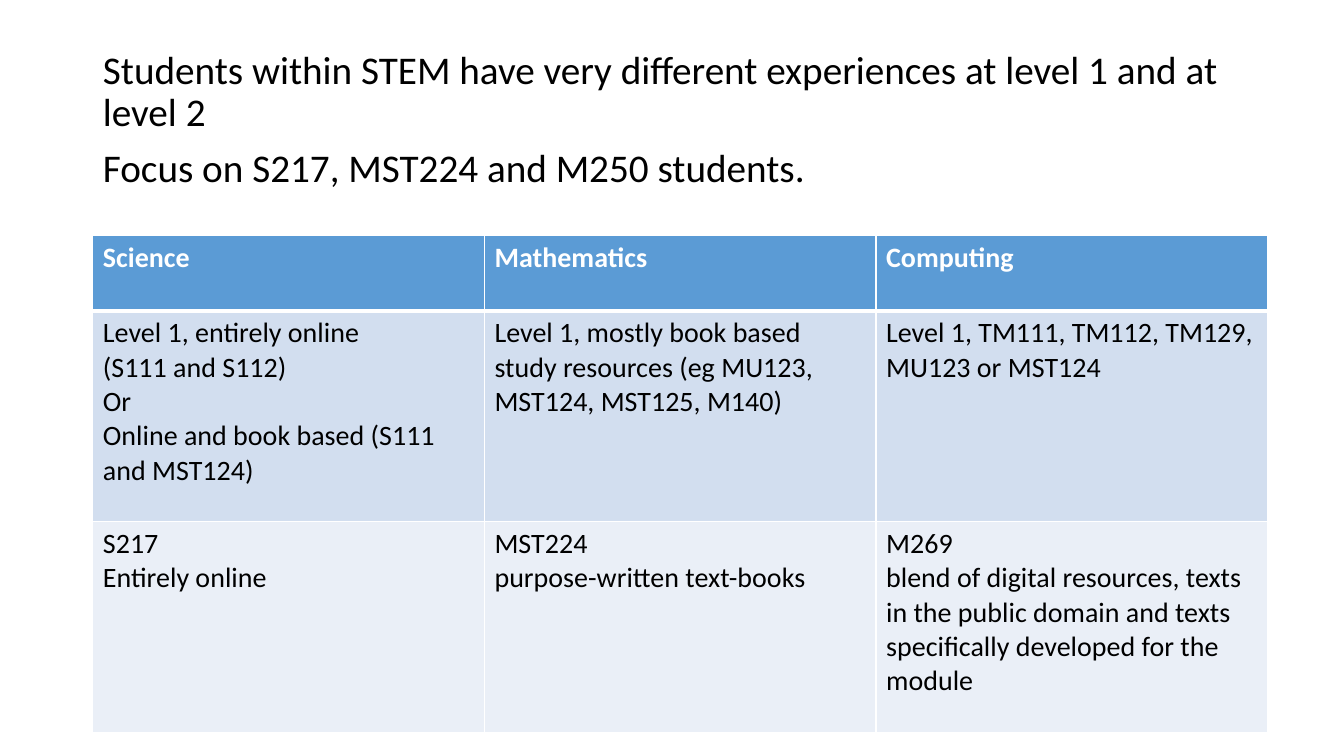
"""Build a slide comparing level 1 and level 2 study in three STEM subjects."""
import lxml.etree
import pptx
import pptx.dml.color
import pptx.enum.text
import pptx.oxml
import pptx.oxml.ns
import pptx.util

Cm, Pt = pptx.util.Cm, pptx.util.Pt
qn = pptx.oxml.ns.qn

THEME = {
    "font": "Calibri",
    "intro_size": 28,
    "table_size": 20,
    "text": "000000",
    "header_text": "FFFFFF",
    "rule": "FFFFFF",
    "row_fills": ["5B9BD5", "D2DEEF", "EAEFF7"],
}


def style_paragraph(paragraph, size, color, bold=False):
    for run in paragraph.runs:
        run.font.name = THEME["font"]
        run.font.size = Pt(size)
        run.font.bold = bold
        run.font.color.rgb = pptx.dml.color.RGBColor.from_string(color)


def add_cell_rules(cell, widths):
    properties = cell._tc.get_or_add_tcPr()
    for position, (side, width) in enumerate(widths.items()):
        rule = lxml.etree.Element(qn(f"a:ln{side}"), w=str(Pt(width)))
        fill = lxml.etree.SubElement(rule, qn("a:solidFill"))
        lxml.etree.SubElement(fill, qn("a:srgbClr"), val=THEME["rule"])
        properties.insert(position, rule)


presentation = pptx.Presentation()
presentation.slide_width = Cm(33.87)
presentation.slide_height = Cm(19.05)
slide = presentation.slides.add_slide(presentation.slide_layouts[1])
unused_title = slide.shapes.title.element
unused_title.getparent().remove(unused_title)

intro = slide.placeholders[1]
intro.left, intro.top, intro.width, intro.height = Cm(2.34), Cm(1.14), Cm(29.21), Cm(16)
intro.text_frame.text = (
    "Students within STEM have very different experiences at level 1 and at level 2\n"
    "Focus on S217, MST224 and M250 students."
)
intro.text_frame.auto_size = pptx.enum.text.MSO_AUTO_SIZE.NONE
intro.text_frame.vertical_anchor = pptx.enum.text.MSO_ANCHOR.TOP
for statement in intro.text_frame.paragraphs:
    statement.line_spacing = 0.9
    statement.space_before = Pt(10)
    style_paragraph(statement, THEME["intro_size"], THEME["text"])
    properties = statement._p.get_or_add_pPr()
    properties.set("marL", "0")
    properties.set("indent", "0")
    lxml.etree.SubElement(properties, qn("a:buNone"))

study_rows = [
    ["Science", "Mathematics", "Computing"],
    [
        "Level 1, entirely online\n(S111 and S112)\nOr\n"
        "Online and book based (S111 and MST124)",
        "Level 1, mostly book based study resources (eg MU123, MST124, MST125, M140)",
        "Level 1, TM111, TM112, TM129, MU123 or MST124",
    ],
    [
        "S217\nEntirely online",
        "MST224\npurpose-written text-books",
        "M269\nblend of digital resources, texts in the public domain "
        "and texts specifically developed for the module",
    ],
]
row_heights = [1.9, 5.31, 5.31]
subjects = slide.shapes.add_table(
    len(study_rows), len(study_rows[0]), Cm(2.34), Cm(5.94), Cm(29.61), Cm(sum(row_heights))
).table
for column in subjects.columns:
    column.width = Cm(9.87)

for row_index, entries in enumerate(study_rows):
    subjects.rows[row_index].height = Cm(row_heights[row_index])
    is_header = row_index == 0
    color = THEME["header_text"] if is_header else THEME["text"]
    rule_widths = {"L": 1, "R": 1, "T": 3 if row_index == 1 else 1, "B": 3 if is_header else 1}
    for column_index, entry in enumerate(entries):
        cell = subjects.cell(row_index, column_index)
        cell.text_frame.text = entry
        cell.fill.solid()
        cell.fill.fore_color.rgb = pptx.dml.color.RGBColor.from_string(
            THEME["row_fills"][row_index]
        )
        add_cell_rules(cell, rule_widths)
        for line in cell.text_frame.paragraphs:
            style_paragraph(line, THEME["table_size"], color, bold=is_header)

presentation.save("out.pptx")
